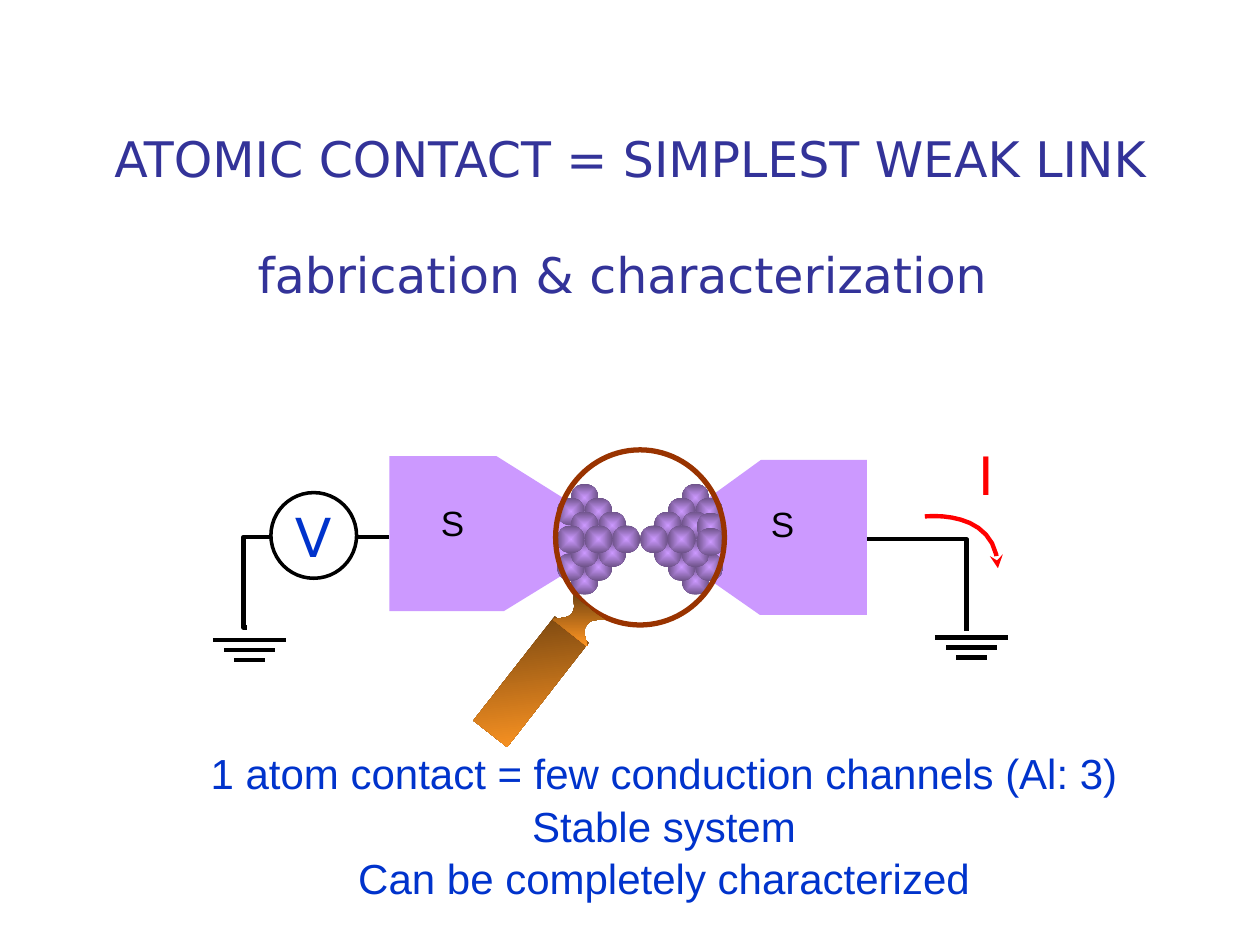
"""Build the atomic contact slide with its biased weak-link circuit."""
from lxml.etree import SubElement
from pptx import Presentation
from pptx.dml.color import RGBColor
from pptx.enum.shapes import MSO_CONNECTOR, MSO_SHAPE
from pptx.enum.text import MSO_ANCHOR, PP_ALIGN
from pptx.oxml.ns import qn
from pptx.util import Inches, Pt

WHITE = RGBColor(0xFF, 0xFF, 0xFF)
BLACK = RGBColor(0x00, 0x00, 0x00)
NAVY = RGBColor(0x33, 0x33, 0x99)
BLUE = RGBColor(0x00, 0x33, 0xCC)
RED = RGBColor(0xFF, 0x00, 0x00)
LILAC = RGBColor(0xCC, 0x99, 0xFF)
PLUM = RGBColor(0x6D, 0x52, 0x88)
BROWN = RGBColor(0x76, 0x45, 0x10)
ORANGE = RGBColor(0xFF, 0x96, 0x23)
RUST = RGBColor(0x99, 0x33, 0x00)


def write(shape, lines, size, font, color, align=PP_ALIGN.CENTER, gap=0, wrap=True):
    frame = shape.text_frame
    frame.word_wrap = wrap
    for index, line in enumerate(lines):
        paragraph = frame.add_paragraph() if index else frame.paragraphs[0]
        paragraph.alignment = align
        if index:
            paragraph.space_before = Pt(gap)
        run = paragraph.add_run()
        run.text = line
        run.font.size = Pt(size)
        run.font.name = font
        run.font.color.rgb = color


def shade(shape, first, last, angle=0):
    shape.shadow.inherit = False
    shape.line.fill.background()
    shape.fill.gradient()
    shape.fill.gradient_angle = angle
    for stop, color in zip(shape.fill.gradient_stops, (first, last)):
        stop.color.rgb = color


prs = Presentation()
prs.slide_width, prs.slide_height = Inches(10), Inches(7.5)
slide = prs.slides.add_slide(prs.slide_layouts[6])
shapes = slide.shapes

title = shapes.add_textbox(Inches(0), Inches(1.27), Inches(10), Inches(0.88))
title.text_frame.vertical_anchor = MSO_ANCHOR.MIDDLE
write(title, ["ATOMIC CONTACT = SIMPLEST WEAK LINK", "fabrication & characterization "],
      28, "DejaVu Sans", NAVY, gap=32.6)

wires = [
    (MSO_CONNECTOR.ELBOW, 7.67, 5.01, 5.87, 4.28, 0),
    (MSO_CONNECTOR.ELBOW, 3.09, 4.26, 1.96, 4.98, 102300),
]
for ground_x, ground_y in [(7.71, 5.06), (1.98, 5.08)]:
    for level, half in enumerate((0.29, 0.2, 0.12)):
        y = ground_y + 0.08 * level
        wires.append((MSO_CONNECTOR.STRAIGHT, ground_x - half, y, ground_x + half, y, None))
for kind, x1, y1, x2, y2, bend in wires:
    wire = shapes.add_connector(kind, Inches(x1), Inches(y1), Inches(x2), Inches(y2))
    wire.line.color.rgb = BLACK
    wire.line.width = Pt(2.5)
    properties = wire._element.spPr
    SubElement(properties, qn("a:effectLst"))
    if bend is not None:
        adjustments = properties.find(qn("a:prstGeom")).find(qn("a:avLst"))
        SubElement(adjustments, qn("a:gd"), name="adj1", fmla=f"val {bend}")

for corners in (
    [(6.03, 4.88), (6.88, 4.88), (6.88, 3.65), (6.04, 3.65), (5.17, 4.28)],
    [(4.96, 4.26), (3.94, 3.62), (3.09, 3.62), (3.09, 4.85), (4, 4.85)],
):
    points = [(Inches(x), Inches(y)) for x, y in corners]
    builder = shapes.build_freeform(*points[0])
    builder.add_line_segments(points[1:], close=True)
    lead = builder.convert_to_shape()
    lead.shadow.inherit = False
    lead.fill.solid()
    lead.fill.fore_color.rgb = LILAC
    lead.line.fill.background()

handle = shapes.add_shape(MSO_SHAPE.RECTANGLE, Inches(3.69), Inches(5.24), Inches(1.05), Inches(0.34))
shade(handle, BROWN, ORANGE, 315)
handle.rotation = 308
handle._element.spPr.find(qn("a:xfrm")).set("flipH", "1")

cluster = [(3, 0), (4, 1), (2, 1), (3, 6), (4, 5), (2, 5),
           (3, 4), (1, 4), (3, 2), (1, 2), (0, 3), (2, 3)]
right_atoms = [(5.08 + 0.11 * column, 3.84 + 0.11 * row) for column, row in cluster]
left_atoms = [(4.86 - 0.11 * column, 4.5 - 0.11 * row) for column, row in cluster + [(4, 3)]]
edge_atoms = [(5.53, 4.07), (5.53, 4.19)]
for x, y in right_atoms + left_atoms + edge_atoms:
    atom = shapes.add_shape(MSO_SHAPE.OVAL, Inches(x), Inches(y), Inches(0.22), Inches(0.22))
    shade(atom, LILAC, PLUM)
    gradient = atom._element.spPr.find(qn("a:gradFill"))
    gradient.remove(gradient.find(qn("a:lin")))
    radial = SubElement(gradient, qn("a:path"), {"path": "shape"})
    SubElement(radial, qn("a:fillToRect"), l="50000", t="50000", r="50000", b="50000")

lens = shapes.add_shape(MSO_SHAPE.OVAL, Inches(4.41), Inches(3.57), Inches(1.34), Inches(1.39))
lens.shadow.inherit = False
lens.fill.background()
lens.line.color.rgb = RUST
lens.line.width = Pt(3)

current_curve = [(7.34, 4.1), (7.34, 4.1), (7.91, 4.03), (7.92, 4.51)]
neck_curve = [
    (4.55, 4.72), (4.61, 4.78), (4.64, 4.8), (4.68, 4.83), (4.72, 4.87), (4.74, 4.88), (4.8, 4.92),
    (4.69, 4.92), (4.69, 4.92), (4.65, 4.97), (4.62, 5.02), (4.66, 5.09), (4.66, 5.13),
    (4.58, 5.07), (4.47, 4.98), (4.39, 4.92), (4.38, 4.9), (4.5, 4.92), (4.54, 4.87),
    (4.57, 4.81), (4.55, 4.8), (4.55, 4.72),
]
outlines = []
for controls, closed in [(current_curve, False), (neck_curve, True)]:
    points = []
    for start in range(0, len(controls) - 1, 3):
        for step in range(1, 13):
            t = step / 12
            weights = ((1 - t) ** 3, 3 * t * (1 - t) ** 2, 3 * t * t * (1 - t), t ** 3)
            points.append([Inches(sum(w * p[axis] for w, p in zip(weights, controls[start:start + 4])))
                           for axis in (0, 1)])
    builder = shapes.build_freeform(*(Inches(value) for value in controls[0]))
    builder.add_line_segments(points, close=closed)
    outlines.append(builder.convert_to_shape())
current, neck = outlines
shade(neck, BROWN, ORANGE, 270)
current.shadow.inherit = False
current.fill.background()
current.line.color.rgb = RED
current.line.width = Pt(2.5)
SubElement(current.line._get_or_add_ln(), qn("a:tailEnd"), type="stealth")

for label, x, y, width, height, size, color in [
    ("I", 7.67, 3.44, 0.32, 0.63, 32, RED),
    ("S", 3.4, 3.93, 0.39, 0.43, 20, BLACK),
    ("S", 6.02, 3.94, 0.39, 0.43, 20, BLACK),
]:
    symbol = shapes.add_textbox(Inches(x), Inches(y), Inches(width), Inches(height))
    write(symbol, [label], size, "Arial", color, PP_ALIGN.LEFT, wrap=False)

source = shapes.add_shape(MSO_SHAPE.OVAL, Inches(2.15), Inches(3.91), Inches(0.68), Inches(0.68))
source.shadow.inherit = False
source.fill.solid()
source.fill.fore_color.rgb = WHITE
source.line.color.rgb = BLACK
source.line.width = Pt(2)
source.text_frame.vertical_anchor = MSO_ANCHOR.MIDDLE
write(source, ["V"], 32, "Cabin", BLUE, wrap=False)

summary = shapes.add_textbox(Inches(0.73), Inches(5.95), Inches(9.08), Inches(1.55))
summary.text_frame.vertical_anchor = MSO_ANCHOR.MIDDLE
summary.text_frame.margin_bottom = Inches(0.4)
write(summary, ["1 atom contact = few conduction channels (Al: 3)", "Stable system",
                "Can be completely characterized"], 24, "Arial", BLUE, gap=1.3)

prs.save("out.pptx")
